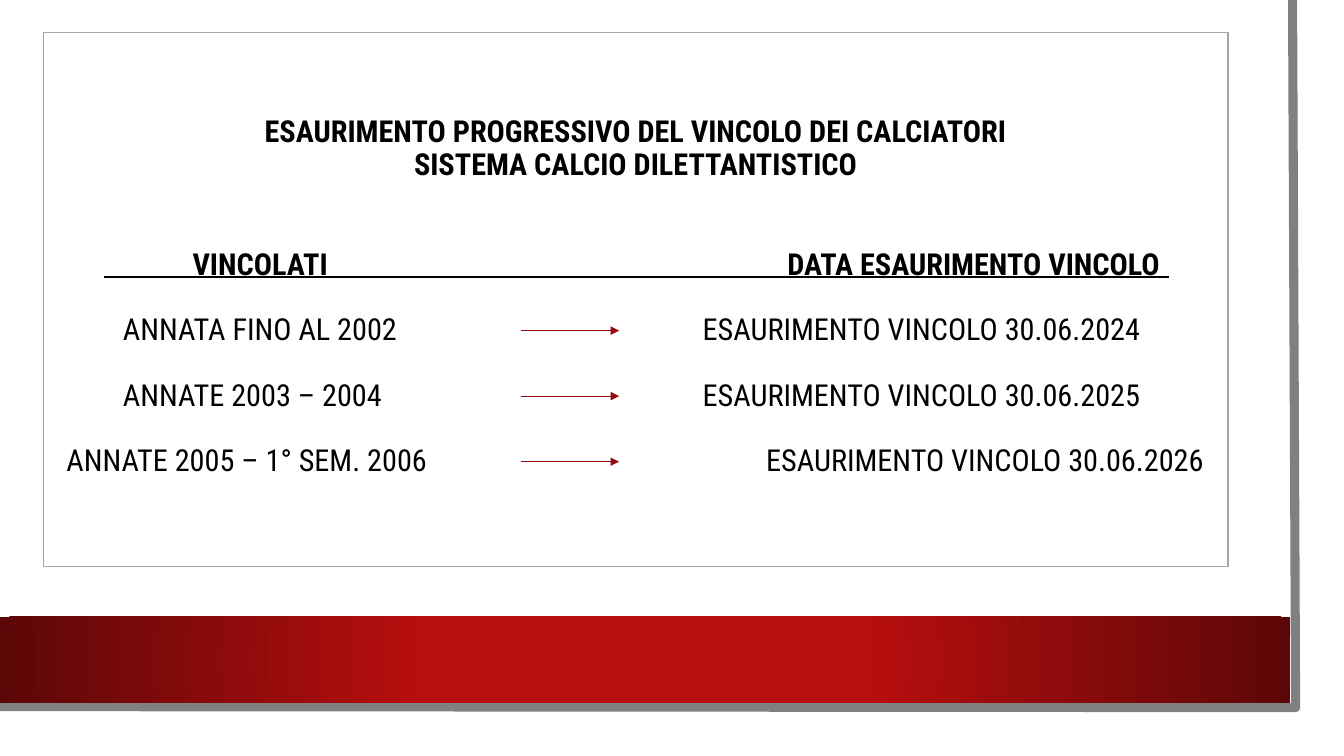
from lxml import etree
from pptx import Presentation
from pptx import util as u
from pptx.dml.color import RGBColor
from pptx.enum import shapes, text
from pptx.oxml import parse_xml
from pptx.oxml.ns import nsdecls, qn

COLOURS = {"text": "000000", "frame": "A6A6A6", "edge": "808080",
           "arrow": "930B0C", "band": "B80E0F", "band_dark": "5C0707"}
FONT = "Roboto Condensed"
SIZE = 21.6

TITLE = ["ESAURIMENTO PROGRESSIVO DEL VINCOLO DEI CALCIATORI",
         "SISTEMA CALCIO DILETTANTISTICO"]
# left text, its left edge, right text, its left edge
ROWS = [
    ("VINCOLATI", 1.91, "DATA ESAURIMENTO VINCOLO", 7.81),
    ("ANNATA FINO AL 2002", 1.22, "ESAURIMENTO VINCOLO 30.06.2024", 6.97),
    ("ANNATE 2003 – 2004", 1.22, "ESAURIMENTO VINCOLO 30.06.2025", 6.97),
    ("ANNATE 2005 – 1° SEM. 2006", 0.66, "ESAURIMENTO VINCOLO 30.06.2026", 7.6),
]
FRAME = (0.43, 0.32, 11.75, 5.3)
BAND = (0, 6.12, 12.8, 0.85)
EDGE = [(12.82, 0), (12.85, 7.02), (-0.03, 7.01)]
HEADER_MIDDLE, ROW_PITCH, ROW_HEIGHT = 2.63, 0.65, 0.4
ARROW = (5.17, 6.14)
RULE = (1.03, 11.59, 2.75)


def colour(name):
    return RGBColor.from_string(COLOURS[name])


def add_text(page, lines, left, top, width, height, bold=False,
             align=text.PP_ALIGN.LEFT):
    box = page.shapes.add_textbox(*map(u.Inches, (left, top, width, height)))
    frame = box.text_frame
    frame.word_wrap = True
    frame.vertical_anchor = text.MSO_ANCHOR.MIDDLE
    frame.margin_left = frame.margin_right = 0
    frame.margin_top = frame.margin_bottom = 0
    for index, line in enumerate(lines):
        para = frame.paragraphs[0] if index == 0 else frame.add_paragraph()
        para.alignment = align
        para.line_spacing = 0.92
        span = para.add_run()
        span.text = line
        span.font.name = FONT
        span.font.size = u.Pt(SIZE)
        span.font.bold = bold
        span.font.color.rgb = colour("text")


def add_line(page, start, end, y, line_colour, weight, arrow=False):
    line = page.shapes.add_connector(
        shapes.MSO_CONNECTOR.STRAIGHT,
        u.Inches(start), u.Inches(y), u.Inches(end), u.Inches(y))
    line.line.color.rgb = colour(line_colour)
    line.line.width = u.Pt(weight)
    properties = line._element.spPr
    if arrow:
        outline = properties.find(qn("a:ln"))
        etree.SubElement(outline, qn("a:tailEnd"), type="triangle")
    etree.SubElement(properties, qn("a:effectLst"))


def add_rectangle(page, place):
    box = page.shapes.add_shape(shapes.MSO_SHAPE.RECTANGLE,
                                *map(u.Inches, place))
    box.shadow.inherit = False
    box.fill.background()
    box.line.fill.background()
    return box


def fill_from_centre(box, inner, outer):
    """Give the box a circular gradient, plain in its inner third."""
    properties = box._element.spPr
    plain = properties.find(qn("a:noFill"))
    properties.replace(plain, parse_xml(
        f'<a:gradFill {nsdecls("a")} rotWithShape="1"><a:gsLst>'
        f'<a:gs pos="34000"><a:srgbClr val="{COLOURS[inner]}"/></a:gs>'
        f'<a:gs pos="100000"><a:srgbClr val="{COLOURS[outer]}"/></a:gs>'
        '</a:gsLst><a:path path="circle">'
        '<a:fillToRect l="50000" t="50000" r="50000" b="50000"/>'
        '</a:path></a:gradFill>'))


def add_page_edge(page):
    points = [(u.Inches(x), u.Inches(y)) for x, y in EDGE]
    builder = page.shapes.build_freeform(*points[0])
    builder.add_line_segments(points[1:], close=False)
    edge = builder.convert_to_shape()
    edge.shadow.inherit = False
    edge.fill.background()
    edge.line.color.rgb = colour("edge")
    edge.line.width = u.Pt(6.5)


def main():
    deck = Presentation()
    deck.slide_width, deck.slide_height = u.Inches(13.33), u.Inches(7.5)
    page = deck.slides.add_slide(deck.slide_layouts[6])

    add_page_edge(page)
    fill_from_centre(add_rectangle(page, BAND), "band", "band_dark")
    frame = add_rectangle(page, FRAME)
    frame.line.color.rgb = colour("frame")
    frame.line.width = u.Pt(0.75)

    add_text(page, TITLE, FRAME[0], 1.1, FRAME[2], 0.76, bold=True,
             align=text.PP_ALIGN.CENTER)
    for index, (group, group_left, expiry, expiry_left) in enumerate(ROWS):
        middle = HEADER_MIDDLE + index * ROW_PITCH
        top = middle - ROW_HEIGHT / 2
        is_header = index == 0
        add_text(page, [group], group_left, top, 4, ROW_HEIGHT, bold=is_header)
        add_text(page, [expiry], expiry_left, top, 5, ROW_HEIGHT,
                 bold=is_header)
        if is_header:
            add_line(page, *RULE, "text", 1.5)
        else:
            add_line(page, *ARROW, middle, "arrow", 0.75, arrow=True)

    deck.save("out.pptx")


if __name__ == "__main__":
    main()
